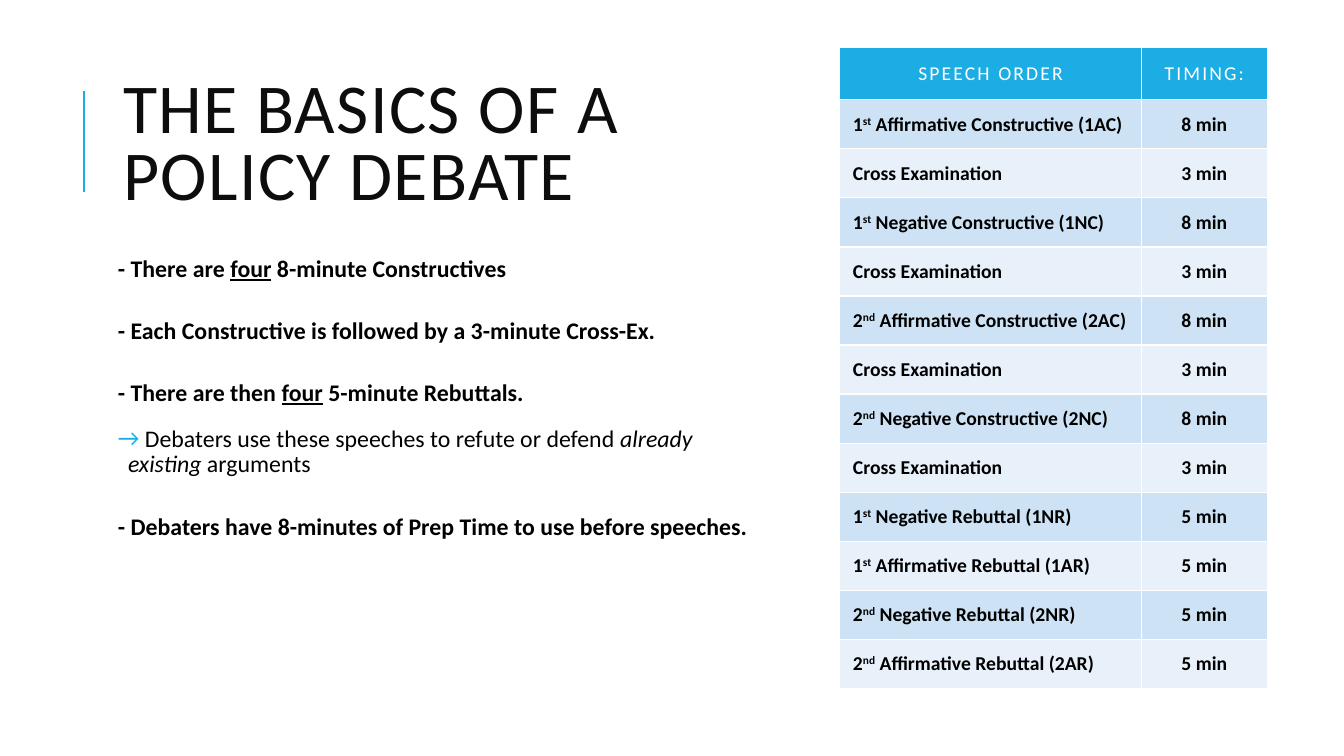
import pptx
import pptx.dml.color
import pptx.enum.shapes
import pptx.enum.text
import pptx.oxml
import pptx.oxml.ns
import pptx.util
from pptx.util import Inches

ALIGN = pptx.enum.text.PP_ALIGN
ANCHOR = pptx.enum.text.MSO_ANCHOR
NAMESPACE = pptx.oxml.ns.nsdecls("a")
ACCENT = "1CADE4"


def color(value):
    return pptx.dml.color.RGBColor.from_string(value)


def add_run(paragraph, text, size, hex_color, formats, attributes):
    run = paragraph.add_run()
    run.text = text
    run.font.color.rgb = color(hex_color)
    for name, value in {"name": "Calibri", "size": pptx.util.Pt(size), **formats}.items():
        setattr(run.font, name, value)
    for name, value in attributes.items():
        run.font._element.set(name, value)


presentation = pptx.Presentation()
presentation.slide_width = Inches(13.33)
presentation.slide_height = Inches(7.5)
slide = presentation.slides.add_slide(presentation.slide_layouts[1])

accent_line = slide.shapes.add_connector(
    pptx.enum.shapes.MSO_CONNECTOR.STRAIGHT,
    Inches(0.83), Inches(0.9), Inches(0.83), Inches(1.9),
)
accent_line.line.color.rgb = color(ACCENT)
accent_line.line.width = pptx.util.Pt(1.5)
accent_line._element.spPr.append(pptx.oxml.parse_xml(f"<a:effectLst {NAMESPACE}/>"))

title = slide.shapes.title
body = slide.placeholders[1]
for shape, top, height, anchor in (
    (title, 0.64, 1.64, ANCHOR.MIDDLE),
    (body, 2.5, 4.3, ANCHOR.TOP),
):
    shape.left, shape.top = Inches(1.12), Inches(top)
    shape.width, shape.height = Inches(6.45), Inches(height)
    shape.text_frame.word_wrap = True
    shape.text_frame.auto_size = pptx.enum.text.MSO_AUTO_SIZE.NONE
    shape.text_frame.vertical_anchor = anchor

title_paragraph = title.text_frame.paragraphs[0]
title_paragraph.alignment = ALIGN.LEFT
title_paragraph.line_spacing = 0.8
add_run(title_paragraph, "THE BASICS OF A POLICY DEBATE", 50, "0D0D0D", {}, {"spc": "100"})

for side in ("left", "top", "right", "bottom"):
    setattr(body.text_frame, f"margin_{side}", Inches(0.05))

BOLD = {"bold": True}
UNDERLINED = {"bold": True, "underline": True}
PLAIN = {"bold": False}
ITALIC = {"bold": False, "italic": True}
points = [
    (0, False, [("- There are ", BOLD), ("four", UNDERLINED), (" 8-minute Constructives", BOLD)]),
    (24, False, [("- Each Constructive is followed by a 3-minute Cross-Ex.", BOLD)]),
    (24, False, [("- There are then ", BOLD), ("four", UNDERLINED), (" 5-minute Rebuttals.", BOLD)]),
    (12, True, [
        (" Debaters use these speeches to refute or defend ", PLAIN),
        ("already existing", ITALIC),
        (" arguments", PLAIN),
    ]),
    (24, False, [("- Debaters have 8-minutes of Prep Time to use before speeches.", BOLD)]),
]
for index, (space_before, arrow, runs) in enumerate(points):
    paragraph = body.text_frame.add_paragraph() if index else body.text_frame.paragraphs[0]
    properties = paragraph._p.get_or_add_pPr()
    indent = Inches(0.1) if arrow else 0
    properties.set("marL", str(indent))
    properties.set("indent", str(-indent))
    if arrow:
        bullets = [
            f'<a:buClr {NAMESPACE}><a:srgbClr val="{ACCENT}"/></a:buClr>',
            f'<a:buFont {NAMESPACE} typeface="Calibri"/>',
            f'<a:buChar {NAMESPACE} char="→"/>',
        ]
    else:
        bullets = [f"<a:buNone {NAMESPACE}/>"]
    for bullet in bullets:
        properties.append(pptx.oxml.parse_xml(bullet))
    for name, value in {
        "line_spacing": 0.9,
        "space_before": pptx.util.Pt(space_before),
        "space_after": pptx.util.Pt(2),
    }.items():
        setattr(paragraph, name, value)
    for text, formats in runs:
        add_run(paragraph, text, 17, "000000", formats, {})

cross_examination = ("", "", "Cross Examination", "3 min")
speeches = [
    ("1", "st", " Affirmative Constructive (1AC)", "8 min"),
    cross_examination,
    ("1", "st", " Negative Constructive (1NC)", "8 min"),
    cross_examination,
    ("2", "nd", " Affirmative Constructive (2AC)", "8 min"),
    cross_examination,
    ("2", "nd", " Negative Constructive (2NC)", "8 min"),
    cross_examination,
    ("1", "st", " Negative Rebuttal (1NR)", "5 min"),
    ("1", "st", " Affirmative Rebuttal (1AR)", "5 min"),
    ("2", "nd", " Negative Rebuttal (2NR)", "5 min"),
    ("2", "nd", " Affirmative Rebuttal (2AR)", "5 min"),
]
rows = [("", "", "SPEECH ORDER", "TIMING:")] + speeches
table_height, header_height = 6.36, 0.52
table = slide.shapes.add_table(
    len(rows), 2, Inches(8.33), Inches(0.47), Inches(4.24), Inches(table_height)
).table
table.columns[0].width = Inches(2.99)
table.columns[1].width = Inches(1.25)

for row_index, (number, suffix, label, timing) in enumerate(rows):
    header = row_index == 0
    speech_height = (table_height - header_height) / len(speeches)
    table.rows[row_index].height = Inches(header_height if header else speech_height)
    fill = ACCENT if header else ("E8F1FA", "CDE3F5")[row_index % 2]
    text_color = "FFFFFF" if header else "000000"
    spacing = {"spc": "150"} if header else {}
    label_runs = [(number, {}), (suffix, {"baseline": "30000"}), (label, {})]
    for column_index, runs in enumerate((label_runs, [(timing, {})])):
        cell = table.cell(row_index, column_index)
        for name, value in {
            "margin_left": Inches(0.13),
            "margin_right": Inches(0.13),
            "margin_top": Inches(0.12),
            "margin_bottom": Inches(0.12),
            "vertical_anchor": ANCHOR.MIDDLE,
        }.items():
            setattr(cell, name, value)
        for edge in "LRTB":
            cell._tc.get_or_add_tcPr().append(pptx.oxml.parse_xml(
                f'<a:ln{edge} {NAMESPACE} w="12700"><a:solidFill>'
                f'<a:srgbClr val="FFFFFF"/></a:solidFill></a:ln{edge}>'
            ))
        cell.fill.solid()
        cell.fill.fore_color.rgb = color(fill)
        paragraph = cell.text_frame.paragraphs[0]
        paragraph.alignment = ALIGN.CENTER if header or column_index else ALIGN.LEFT
        for text, attributes in runs:
            if text:
                add_run(paragraph, text, 14, text_color, {"bold": not header}, {**spacing, **attributes})

presentation.save("out.pptx")
